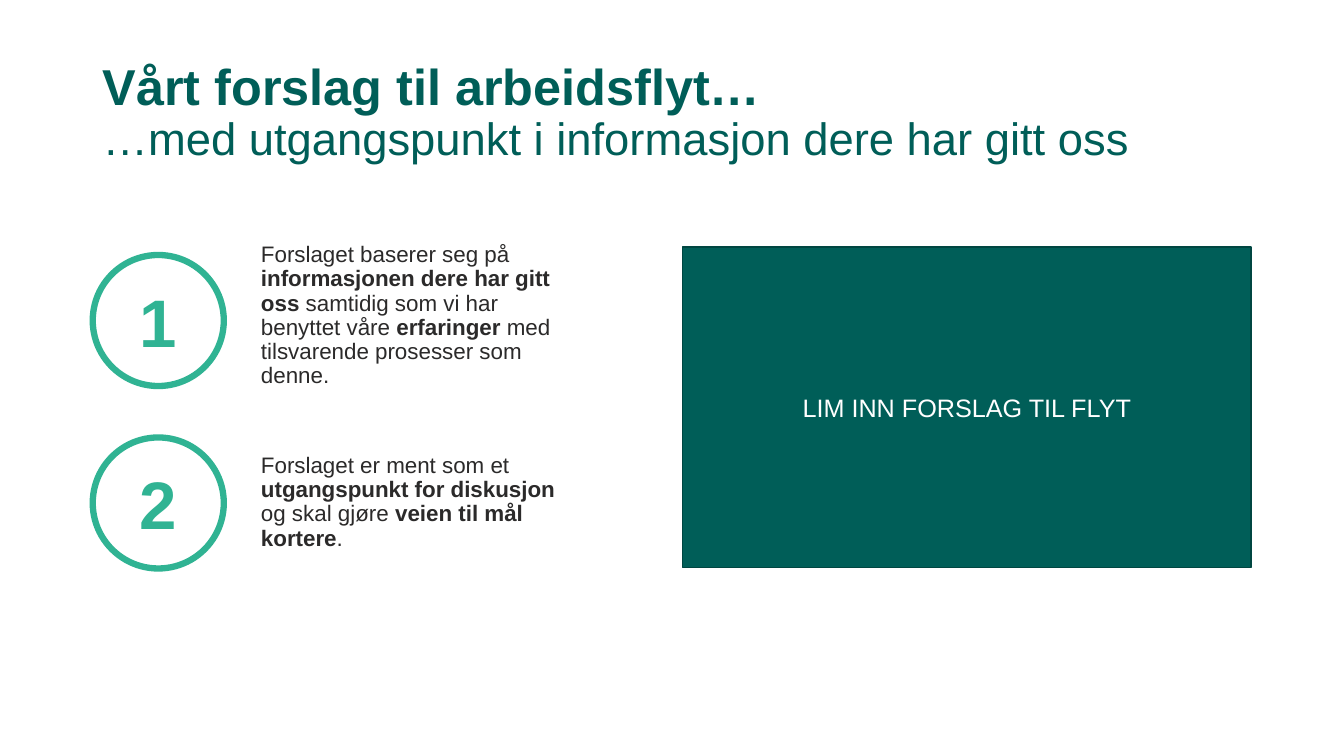
from pptx import Presentation
from pptx.dml.color import RGBColor
from pptx.enum.shapes import MSO_SHAPE
from pptx.enum.text import MSO_ANCHOR, PP_ALIGN
from pptx.util import Inches, Pt

OVAL, RECTANGLE = MSO_SHAPE.OVAL, MSO_SHAPE.RECTANGLE
MIDDLE = MSO_ANCHOR.MIDDLE
LEFT, CENTER = PP_ALIGN.LEFT, PP_ALIGN.CENTER

FONT = "Arial"
DARK_GREEN = RGBColor(0x00, 0x5E, 0x58)
EDGE_GREEN = RGBColor(0x00, 0x46, 0x41)
LIGHT_GREEN = RGBColor(0x30, 0xB3, 0x93)
INK = RGBColor(0x2B, 0x2A, 0x2A)
WHITE = RGBColor(0xFF, 0xFF, 0xFF)

TITLE = "Vårt forslag til arbeidsflyt…"
SUBTITLE = "…med utgangspunkt i informasjon dere har gitt oss"
MARGIN = 0.92
CIRCLE_SIZE = 1.3

# Each point: circle top, text top, text height, alternating plain and bold parts
POINTS = [
    (2.53, 2.45, 1.37, [
        "Forslaget baserer seg på ", "informasjonen dere har gitt oss ",
        "samtidig som vi har benyttet våre ", "erfaringer",
        " med tilsvarende prosesser som denne."]),
    (4.34, 4.34, 1.29, [
        "Forslaget er ment som et ", "utgangspunkt for diskusjon ",
        "og skal gjøre ", "veien til mål kortere", "."]),
]


def add_run(paragraph, text, *, size, color, bold=False):
    run = paragraph.add_run()
    run.text = text
    run.font.name = FONT
    run.font.size = Pt(size)
    run.font.bold = bold
    run.font.color.rgb = color


def middle_paragraph(shape, align=LEFT, line_spacing=1.0):
    """Set up the shape's text frame and return its first paragraph."""
    frame = shape.text_frame
    frame.word_wrap = True
    frame.vertical_anchor = MIDDLE
    paragraph = frame.paragraphs[0]
    paragraph.alignment = align
    paragraph.line_spacing = line_spacing
    return paragraph


def add_text_box(slide, left, top, width, height):
    box = slide.shapes.add_textbox(
        Inches(left), Inches(top), Inches(width), Inches(height))
    return middle_paragraph(box, line_spacing=0.9)


def add_outlined_shape(slide, preset, left, top, width, height,
                       line_color, line_width, fill=None):
    shape = slide.shapes.add_shape(
        preset, Inches(left), Inches(top), Inches(width), Inches(height))
    shape.shadow.inherit = False
    if fill is None:
        shape.fill.background()
    else:
        shape.fill.solid()
        shape.fill.fore_color.rgb = fill
    shape.line.color.rgb = line_color
    shape.line.width = Pt(line_width)
    return middle_paragraph(shape, align=CENTER)


def add_title(slide):
    title = add_text_box(slide, MARGIN, 0.66, 11.5, 0.93)
    add_run(title, TITLE, size=36, color=DARK_GREEN, bold=True)
    title.add_line_break()
    add_run(title, SUBTITLE, size=32.4, color=DARK_GREEN)


def add_point(slide, number, circle_top, text_top, text_height, parts):
    body = add_text_box(slide, 2.49, text_top, 3.37, text_height)
    for index, part in enumerate(parts):
        add_run(body, part, size=16, color=INK, bold=index % 2 == 1)
    circle = add_outlined_shape(slide, OVAL, MARGIN, circle_top, CIRCLE_SIZE,
                                CIRCLE_SIZE, LIGHT_GREEN, 4.5)
    add_run(circle, str(number), size=48, color=LIGHT_GREEN, bold=True)


def add_flow_area(slide):
    area = add_outlined_shape(slide, RECTANGLE, 6.77, 2.45, 5.64, 3.18,
                              EDGE_GREEN, 1, fill=DARK_GREEN)
    add_run(area, "LIM INN FORSLAG TIL FLYT", size=18, color=WHITE)


def main():
    presentation = Presentation()
    presentation.slide_width = Inches(13.33)
    presentation.slide_height = Inches(7.5)
    slide = presentation.slides.add_slide(presentation.slide_layouts[6])
    add_title(slide)
    for number, point in enumerate(POINTS, start=1):
        add_point(slide, number, *point)
    add_flow_area(slide)
    presentation.save("out.pptx")


if __name__ == "__main__":
    main()
